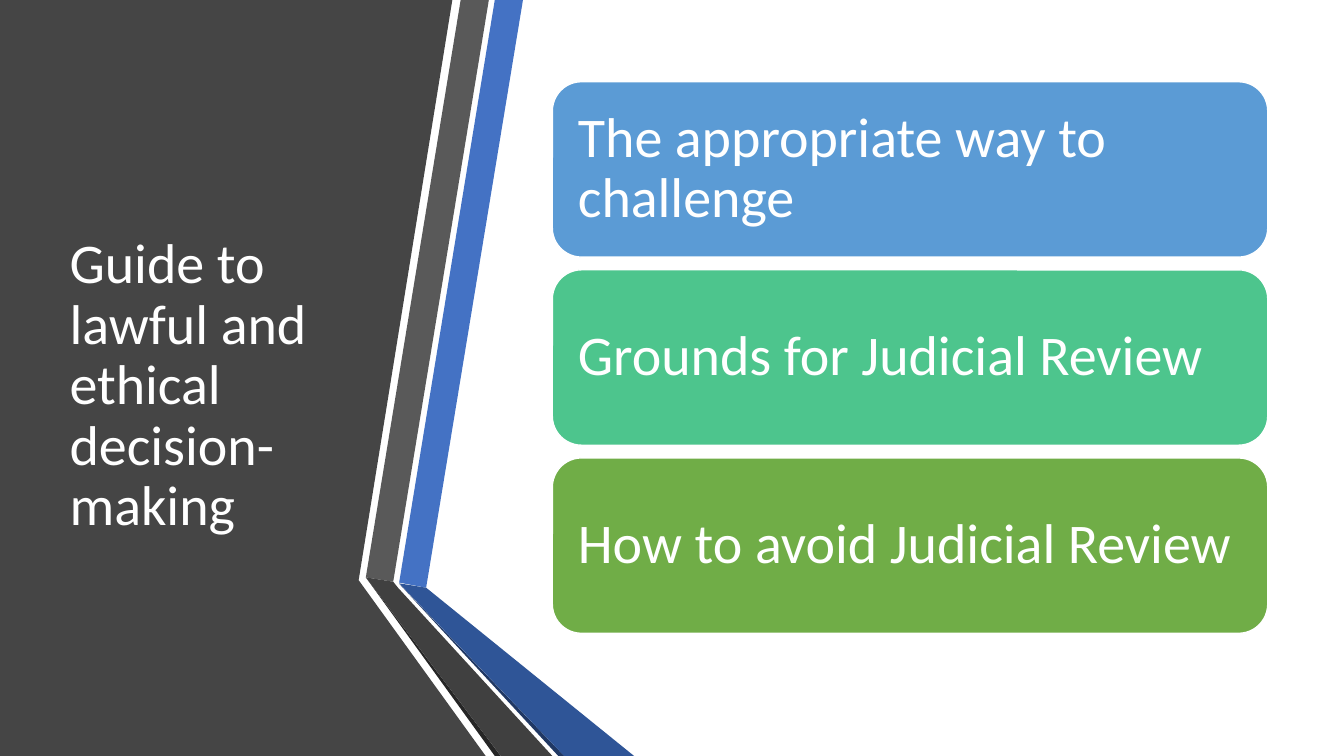
"""Build a slide with a folded ribbon, a title and three topic cards."""
import pptx
import pptx.util
import pptx.dml.color
import pptx.enum.shapes
import pptx.enum.text

Cm, Pt = pptx.util.Cm, pptx.util.Pt

TITLE = "Guide to lawful and ethical decision-making"
CARDS = [
    ("The appropriate way to challenge", "blue"),
    ("Grounds for Judicial Review", "mint"),
    ("How to avoid Judicial Review", "green"),
]
COLORS = {
    "white": "FFFFFF", "panel": "454545",
    "band": "4472C4", "fold": "2F5597", "edge": "203864",
    "gray": "595959", "dark": "404040", "black": "262626",
    "blue": "5B9BD5", "mint": "4DC58D", "green": "70AD47",
}
WIDE, HIGH = 33.87, 19.05
RIBBON = [
    ("panel", [(0, 0), (11.4, 0), (9.04, 14.62), (12.24, HIGH), (0, HIGH)]),
    ("band", [(10.06, 14.68), (10.74, 14.81), (13.18, 0), (12.47, 0)]),
    ("gray", [(12.32, 0), (11.61, 0), (9.22, 14.55), (9.91, 14.66)]),
    ("black", [(9.22, 14.55), (12.47, HIGH), (12.62, HIGH)]),
    ("edge", [(10.06, 14.71), (14.07, HIGH), (14.22, HIGH)]),
    ("fold", [(10.06, 14.7), (14.22, HIGH), (15.98, HIGH), (10.74, 14.81)]),
    ("dark", [(13.92, HIGH), (10.03, 14.81), (9.91, 14.66), (9.22, 14.55),
              (12.62, HIGH)]),
]
LEFT, TOP, WIDTH, HEIGHT, GAP = 13.92, 2.06, 18.03, 4.42, 0.32


def color(name):
    """Return the named colour."""
    return pptx.dml.color.RGBColor.from_string(COLORS[name])


def paint(shape, name):
    """Fill a shape with one flat colour."""
    shape.shadow.inherit = False
    shape.fill.solid()
    shape.fill.fore_color.rgb = color(name)


def write(shape, text):
    """Set white text, left aligned and centred in height."""
    frame = shape.text_frame
    frame.text = text
    frame.word_wrap = True
    frame.auto_size = pptx.enum.text.MSO_AUTO_SIZE.NONE
    frame.vertical_anchor = pptx.enum.text.MSO_ANCHOR.MIDDLE
    para = frame.paragraphs[0]
    para.alignment = pptx.enum.text.PP_ALIGN.LEFT
    para.line_spacing = 0.9
    font = para.runs[0].font
    font.name, font.size = "Calibri", Pt(40)
    font.color.rgb = color("white")


def draw_part(slide, name, points):
    """Draw one closed part of the ribbon."""
    spots = [(Cm(x), Cm(y)) for x, y in points]
    pen = slide.shapes.build_freeform(*spots[0])
    pen.add_line_segments(spots[1:], close=True)
    part = pen.convert_to_shape()
    paint(part, name)
    part.line.fill.background()


def draw_card(slide, row, text, name):
    """Draw the card of the given row."""
    card = slide.shapes.add_shape(
        pptx.enum.shapes.MSO_SHAPE.ROUNDED_RECTANGLE,
        Cm(LEFT), Cm(TOP + row * (HEIGHT + GAP)), Cm(WIDTH), Cm(HEIGHT))
    paint(card, name)
    card.line.color.rgb = color("white")
    card.line.width = Pt(1)
    write(card, text)
    frame = card.text_frame
    frame.margin_left = frame.margin_right = Cm(0.43)
    frame.margin_top = frame.margin_bottom = Cm(0.43)


def main():
    """Build and save the slide."""
    deck = pptx.Presentation()
    deck.slide_width, deck.slide_height = Cm(WIDE), Cm(HIGH)
    slide = deck.slides.add_slide(deck.slide_layouts[5])
    for name, points in RIBBON:
        draw_part(slide, name, points)
    title = slide.shapes.title
    title.left, title.top = Cm(1.5), Cm(2.66)
    title.width, title.height = Cm(7.72), Cm(14.17)
    write(title, TITLE)
    slide.shapes.element.append(title.element)
    for row, (text, name) in enumerate(CARDS):
        draw_card(slide, row, text, name)
    deck.save("out.pptx")


if __name__ == "__main__":
    main()
